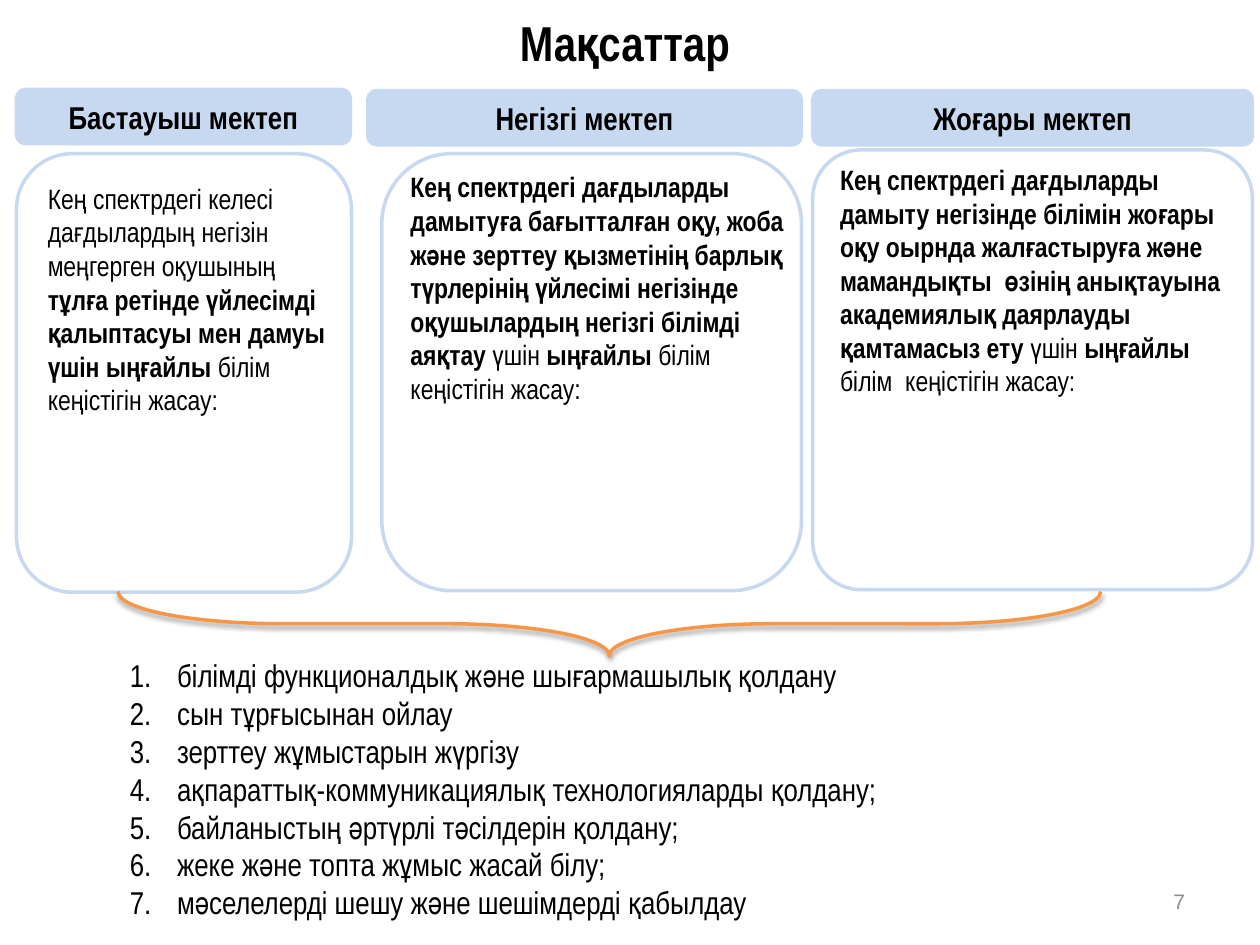
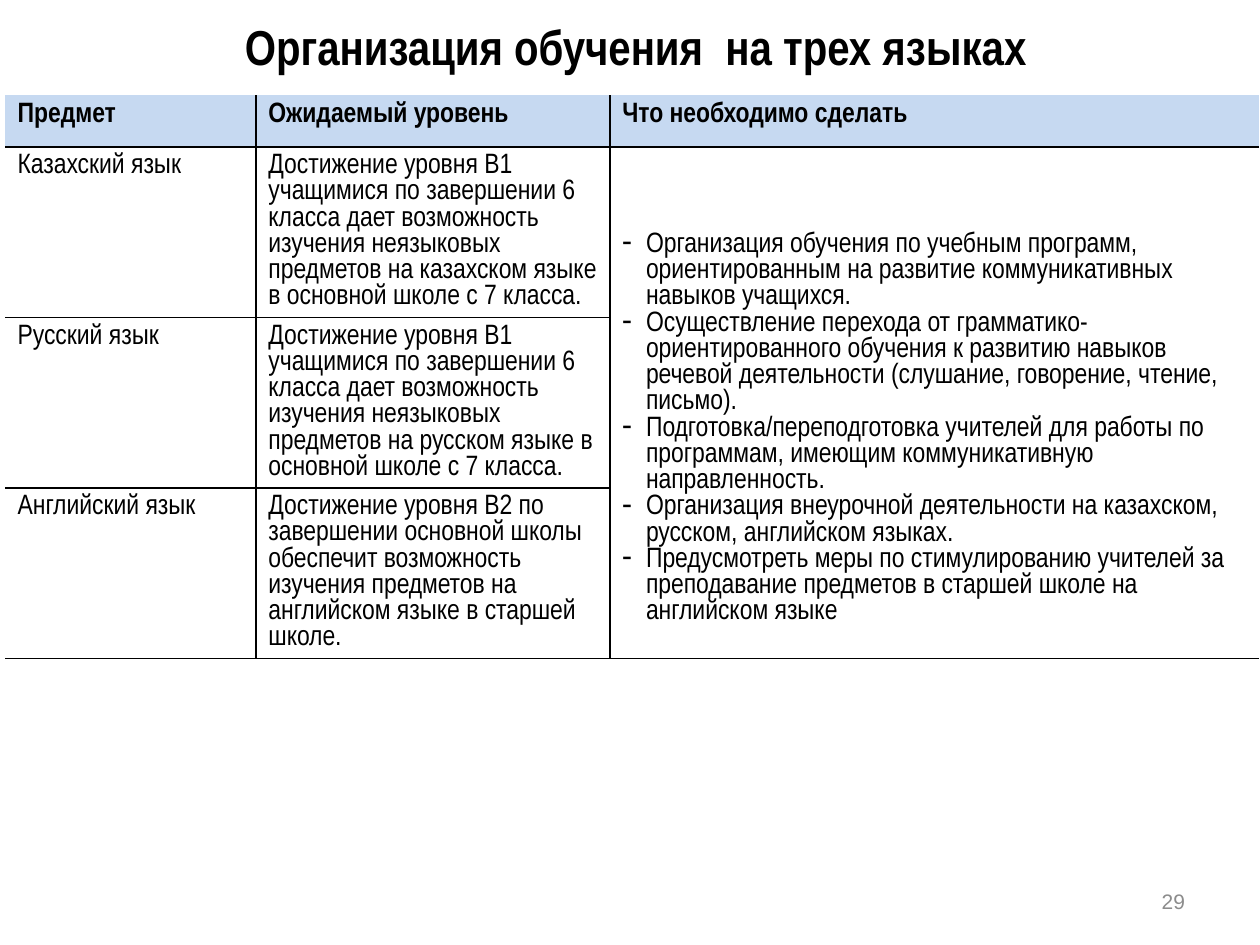
"""Build two slides: school goals by level, and teaching in three languages."""
from lxml import etree
from pptx import Presentation, util as u
from pptx.dml.color import RGBColor
from pptx.enum import shapes, text
from pptx.oxml.ns import qn

COLORS = {"ink": "000000", "band": "C6D9F1", "brace": "F79646", "page": "8C8C8C"}
FONT = "Arial Narrow"
PAGE_FONT = "Arial"
CENTER, RIGHT = text.PP_ALIGN.CENTER, text.PP_ALIGN.RIGHT
MIDDLE = text.MSO_ANCHOR.MIDDLE

GOALS = {
    "title": "Мақсаттар",
    "title_box": (-0.7, 4.3, 715.7, 39.6),
    "page": "7",
    "levels": [
        {
            "name": "Бастауыш мектеп",
            "head": (9.4, 51.1, 190.8, 31),
            "card": (9.4, 87.8, 191.5, 250.6),
            "note": (20.2, 100.1, 180.7, 143.3),
            "runs": [
                ("Кең спектрдегі келесі дағдылардың негізін меңгерген оқушының ", False),
                ("тұлға ретінде үйлесімді қалыптасуы мен дамуы үшін ыңғайлы ", True),
                ("білім  кеңістігін жасау:", False),
            ],
        },
        {
            "name": "Негізгі мектеп",
            "head": (210.2, 51.8, 247.7, 31),
            "card": (218.2, 87.8, 239.8, 249.8),
            "note": (227.5, 93.6, 230.4, 158.4),
            "runs": [
                ("Кең спектрдегі дағдыларды дамытуға бағытталған оқу, жоба және "
                 "зерттеу қызметінің барлық түрлерінің үйлесімі негізінде "
                 "оқушылардың негізгі білімді аяқтау", True),
                (" үшін ", False),
                ("ыңғайлы ", True),
                ("білім  кеңістігін жасау:", False),
            ],
        },
        {
            "name": "Жоғары мектеп",
            "head": (464.4, 51.8, 251.3, 31),
            "card": (464.4, 85.7, 251.3, 251.3),
            "radius": 0.11,
            "note": (473, 89.3, 236.9, 143.3),
            "runs": [
                ("Кең спектрдегі дағдыларды дамыту негізінде білімін жоғары оқу "
                 "оырнда жалғастыруға және мамандықты  өзінің анықтауына "
                 "академиялық даярлауды қамтамасыз ету ", True),
                ("үшін ", False),
                ("ыңғайлы ", True),
                ("білім  кеңістігін жасау:", False),
            ],
        },
    ],
    "brace": (329.8, 75.6, 36.7, 561.6),
    "skills_box": (67, 371.5, 617.8, 160),
    "skills": [
        "білімді функционалдық және шығармашылық қолдану",
        "сын тұрғысынан ойлау",
        "зерттеу жұмыстарын жүргізу",
        "ақпараттық-коммуникациялық технологияларды қолдану;",
        "байланыстың әртүрлі тәсілдерін қолдану;",
        "жеке және топта жұмыс жасай білу;",
        "мәселелерді шешу және шешімдерді қабылдау",
    ],
}

B1_LEVEL = ("Достижение уровня B1 учащимися по завершении 6 класса дает возможность "
            "изучения неязыковых предметов на {} языке в основной школе с 7 класса.")
LANGUAGES = {
    "title": "Организация обучения  на трех языках",
    "title_box": (36.7, 9.4, 653, 33.1),
    "page": "29",
    "table_at": (2.9, 54.5),
    "widths": (143.3, 202.3, 371),
    "heights": (29.5, 97.4, 97.4, 97.4),
    "header": ["Предмет", "Ожидаемый уровень", "Что необходимо сделать"],
    "rows": [
        ("Казахский язык", B1_LEVEL.format("казахском")),
        ("Русский язык", B1_LEVEL.format("русском")),
        ("Английский язык",
         "Достижение уровня В2 по завершении основной школы обеспечит возможность "
         "изучения предметов на английском языке в старшей школе."),
    ],
    "actions": [
        "Организация обучения по учебным программ, ориентированным на развитие "
        "коммуникативных навыков учащихся.",
        "Осуществление перехода от грамматико-ориентированного обучения к развитию "
        "навыков речевой деятельности (слушание, говорение, чтение, письмо).",
        "Подготовка/переподготовка учителей для работы по программам, имеющим "
        "коммуникативную направленность.",
        "Организация внеурочной деятельности на казахском, русском, английском языках.",
        "Предусмотреть меры по стимулированию учителей за преподавание предметов в "
        "старшей школе на английском языке",
    ],
}
LINE_PITCH = 15
CELL_TOP = 3.6


def rgb(name):
    return RGBColor.from_string(COLORS[name])


def pts(box):
    return [u.Pt(v) for v in box]


def place(sp, box):
    sp.left, sp.top, sp.width, sp.height = pts(box)


def add_runs(p, runs, size, color="ink", font=FONT):
    for words, bold in runs:
        r = p.add_run()
        r.text = words
        r.font.size, r.font.name, r.font.bold = u.Pt(size), font, bold
        r.font.color.rgb = rgb(color)


def fill_paragraphs(tf, items, size, indent, tag, **attrs):
    for i, item in enumerate(items):
        p = tf.add_paragraph() if i else tf.paragraphs[0]
        p.space_before = u.Pt(0)
        add_runs(p, [(item, False)], size)
        pPr = p._p.get_or_add_pPr()
        pPr.set("marL", str(u.Pt(indent)))
        pPr.set("indent", str(-u.Pt(indent)))
        etree.SubElement(pPr, qn(tag), attrs)


def add_text(s, box, runs, size, align=None, anchor=None, **style):
    tf = s.shapes.add_textbox(*pts(box)).text_frame
    tf.word_wrap = True
    tf.vertical_anchor = anchor
    tf.paragraphs[0].alignment = align
    add_runs(tf.paragraphs[0], runs, size, **style)


def add_outline(s, kind, box, color, fill=None):
    sp = s.shapes.add_shape(kind, *pts(box))
    sp.shadow.inherit = False
    sp.line.color.rgb, sp.line.width = rgb(color), u.Pt(2)
    if fill:
        sp.fill.solid()
        sp.fill.fore_color.rgb = rgb(fill)
    else:
        sp.fill.background()
    return sp


def add_slide(prs, layout, content):
    s = prs.slides.add_slide(prs.slide_layouts[layout])
    place(s.shapes.title, content["title_box"])
    tf = s.shapes.title.text_frame
    tf.auto_size, tf.vertical_anchor = text.MSO_AUTO_SIZE.NONE, MIDDLE
    tf.paragraphs[0].alignment = CENTER
    add_runs(tf.paragraphs[0], [(content["title"], True)], 28)
    add_text(s, (516.2, 500.4, 168, 28.8), [(content["page"], False)], 12,
             RIGHT, MIDDLE, color="page", font=PAGE_FONT)
    return s


def add_level(s, level):
    rounded = shapes.MSO_SHAPE.ROUNDED_RECTANGLE
    head = add_outline(s, rounded, level["head"], "band", "band")
    p = head.text_frame.paragraphs[0]
    p.alignment = CENTER
    head.text_frame.vertical_anchor = MIDDLE
    add_runs(p, [(level["name"], True)], 18)
    card = add_outline(s, rounded, level["card"], "band")
    if "radius" in level:
        card.adjustments[0] = level["radius"]
    add_text(s, level["note"], level["runs"], 16)


def add_brace(s, box):
    sp = add_outline(s, shapes.MSO_SHAPE.RIGHT_BRACE, box, "brace")
    sp.rotation = 90
    sp.adjustments[0] = 2.55
    effects = sp._element.spPr.find(qn("a:effectLst"))
    shadow = etree.SubElement(effects, qn("a:outerShdw"), blurRad="40000",
                              dist="20000", dir="5400000", rotWithShape="0")
    tint = etree.SubElement(shadow, qn("a:srgbClr"), val=COLORS["ink"])
    etree.SubElement(tint, qn("a:alpha"), val="38000")


def set_borders(cell, sides):
    tcPr = cell._tc.get_or_add_tcPr()
    for i, side in enumerate("LRTB"):
        ln = etree.Element(qn("a:ln" + side), w=str(u.Pt(1)))
        if side in sides:
            fill = etree.SubElement(ln, qn("a:solidFill"))
            etree.SubElement(fill, qn("a:srgbClr"), val=COLORS["ink"])
        else:
            etree.SubElement(ln, qn("a:noFill"))
        tcPr.insert(i, ln)


def add_language_table(s, content):
    widths, heights = content["widths"], content["heights"]
    box = (*content["table_at"], sum(widths), sum(heights))
    table = s.shapes.add_table(len(heights), len(widths), *pts(box)).table
    table.first_row = table.horz_banding = False
    for col, width in zip(table.columns, widths):
        col.width = u.Pt(width)
    for row, height in zip(table.rows, heights):
        row.height = u.Pt(height)

    for i, words in enumerate([content["header"], *content["rows"]]):
        for j, item in enumerate(words):
            add_runs(table.cell(i, j).text_frame.paragraphs[0], [(item, i == 0)], 16)
    actions = table.cell(1, 2)
    actions.merge(table.cell(len(heights) - 1, 2))
    actions.margin_top = u.Pt(CELL_TOP + 3 * LINE_PITCH)
    fill_paragraphs(actions.text_frame, content["actions"], 16, 13.5,
                    "a:buChar", char="-")

    for i in range(len(heights)):
        for j in range(len(widths)):
            cell = table.cell(i, j)
            if i == 0:
                cell.fill.solid()
                cell.fill.fore_color.rgb = rgb("band")
            else:
                cell.fill.background()
            set_borders(cell, "B" + "T" * (i > 0) + "L" * (j > 0)
                        + "R" * (j < len(widths) - 1))
            for p in cell.text_frame.paragraphs:
                p.line_spacing = u.Pt(LINE_PITCH)


def main():
    prs = Presentation()
    prs.slide_width, prs.slide_height = u.Pt(720), u.Pt(540)

    s = add_slide(prs, 1, GOALS)
    for level in GOALS["levels"]:
        add_level(s, level)
    skills = s.placeholders[1]
    place(skills, GOALS["skills_box"])
    skills.text_frame.auto_size = text.MSO_AUTO_SIZE.NONE
    fill_paragraphs(skills.text_frame, GOALS["skills"], 18, 27,
                    "a:buAutoNum", type="arabicPeriod")
    add_brace(s, GOALS["brace"])

    s = add_slide(prs, 5, LANGUAGES)
    add_language_table(s, LANGUAGES)
    prs.save("out.pptx")


if __name__ == "__main__":
    main()
